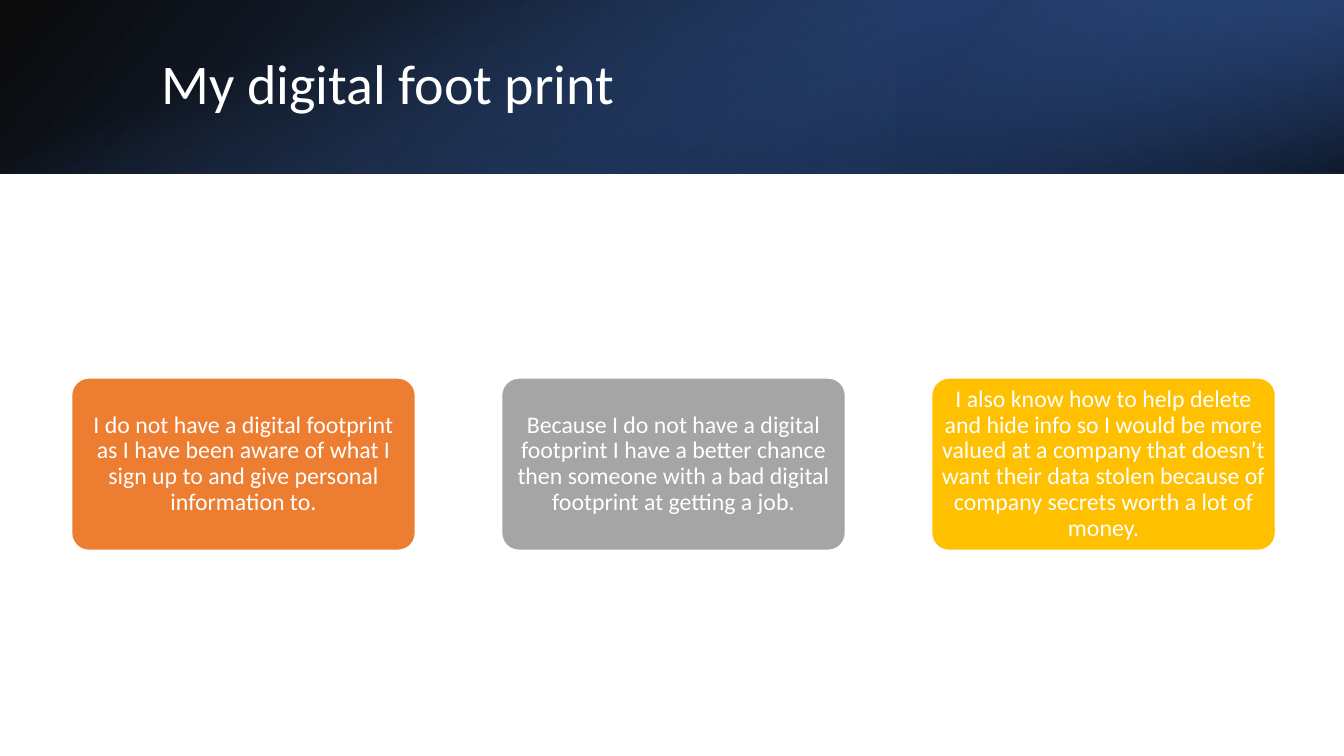
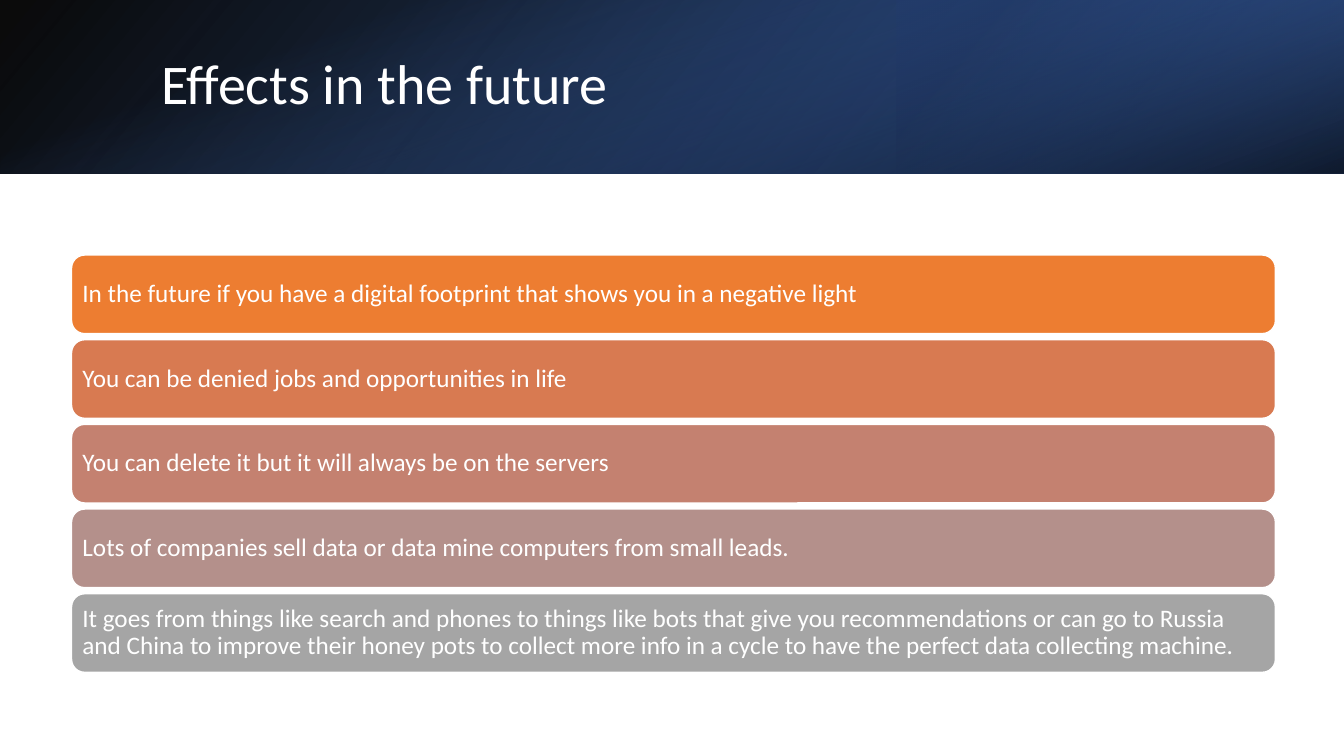
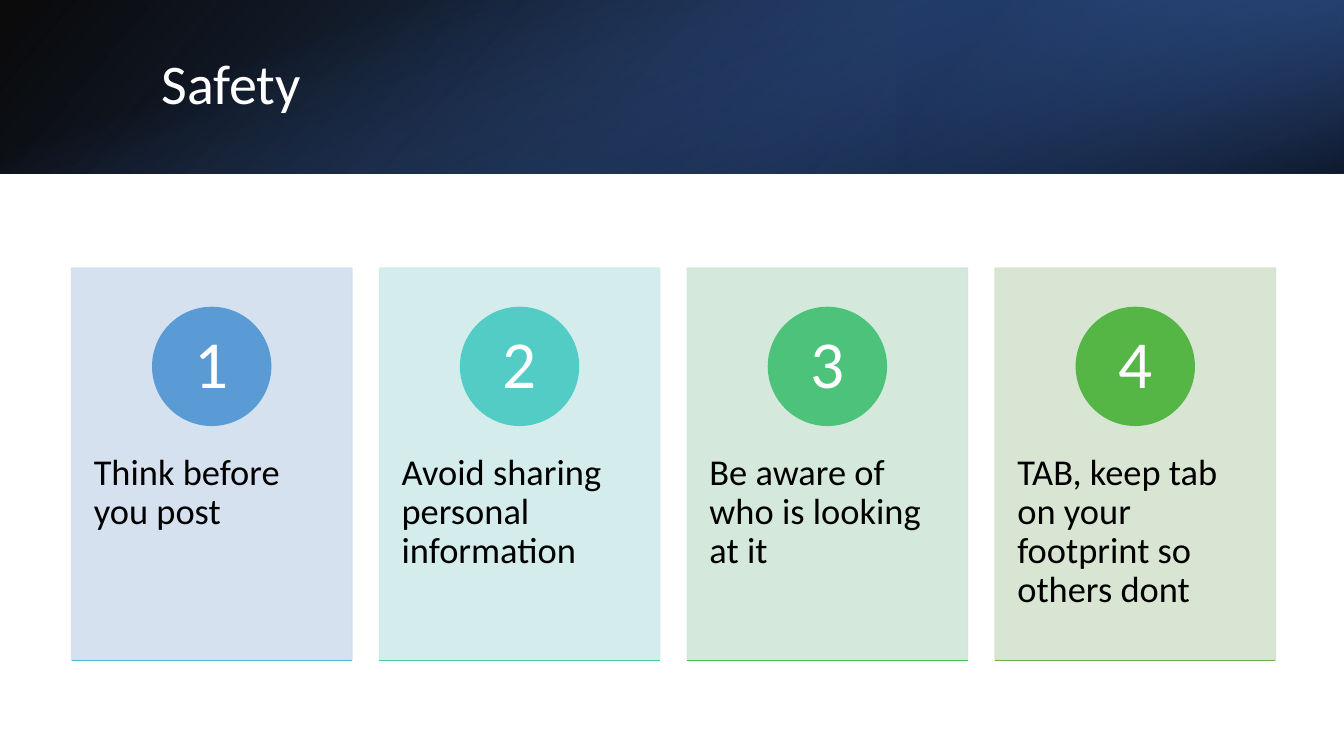
from dataclasses import dataclass
from lxml import etree
from pptx import Presentation
from pptx.dml.color import RGBColor
from pptx.enum import shapes, text
from pptx.oxml import ns
from pptx.util import Inches, Pt


@dataclass(frozen=True)
class Theme:
    font: str = "Calibri"
    white: str = "FFFFFF"
    black: str = "000000"
    head: int = 40
    box: int = 17
    row: int = 18
    card: int = 26
    num: int = 48


T = Theme()
WIDE, HIGH, BAND = 13.33, 7.5, 1.72
LEFT, RIGHT = 0.71, 12.65
KIND, SIDE = shapes.MSO_SHAPE, text.PP_ALIGN
MID, TOP = text.MSO_ANCHOR.MIDDLE, text.MSO_ANCHOR.TOP

# Header layers: place, rotation, flipped, angle, stops (position, colour, opacity)
LAYERS = [
    ((0, 0, WIDE, BAND), 0, True, 140,
     [(0, "000000", 96), (100, "2F5597", 100)]),
    ((8.89, 0, 4.44, BAND), 180, True, 320,
     [(19, "203864", 68), (100, "4472C4", 79)]),
    (((WIDE - BAND) / 2, (BAND - WIDE) / 2, BAND, WIDE), 90, False, 340,
     [(23, "4472C4", 0), (99, "000000", 74)]),
]

BOXES = [
    ("ED7D31", "I do not have a digital footprint as I have been aware of "
     "what I sign up to and give personal information to."),
    ("A5A5A5", "Because I do not have a digital footprint I have a better "
     "chance then someone with a bad digital footprint at getting a job."),
    ("FFC000", "I also know how to help delete and hide info so I would be "
     "more valued at a company that doesn’t want their data stolen because "
     "of company secrets worth a lot of money."),
]

ROWS = [
    ("ED7D31", "In the future if you have a digital footprint that shows you "
     "in a negative light"),
    ("D87A51", "You can be denied jobs and opportunities in life"),
    ("C48170", "You can delete it but it will always be on the servers"),
    ("B4908B", "Lots of companies sell data or data mine computers from "
     "small leads."),
    ("A5A5A5", "It goes from things like search and phones to things like "
     "bots that give you recommendations or can go to Russia and China to "
     "improve their honey pots to collect more info in a cycle to have the "
     "perfect data collecting machine."),
]

# Card fill, disc, base line, wording
CARDS = [
    ("D2DEEF", "5B9BD5", "57B7D1", "Think before you post"),
    ("D0ECEA", "53CCC5", "4FC7A0", "Avoid sharing personal information"),
    ("D0E7D8", "4CC27B", "48BD58", "Be aware of who is looking at it"),
    ("D5E3CF", "55B646", "70AD47",
     "TAB, keep tab on your footprint so others dont"),
]


def rgb(code):
    return RGBColor.from_string(code)


def write(shape, words, size, color, align=SIDE.LEFT, anchor=MID,
          pad=(0.1, 0.05, 0.1, 0.05)):
    frame = shape.text_frame
    frame.word_wrap = True
    frame.auto_size = text.MSO_AUTO_SIZE.NONE
    frame.vertical_anchor = anchor
    (frame.margin_left, frame.margin_top,
     frame.margin_right, frame.margin_bottom) = map(Inches, pad)
    para = frame.paragraphs[0]
    para.alignment, para.line_spacing = align, 0.9
    run = para.add_run()
    run.text = words
    run.font.name, run.font.size = T.font, Pt(size)
    run.font.color.rgb = rgb(color)


def draw(slide, kind, place, fill=None, line=None):
    shape = slide.shapes.add_shape(kind, *map(Inches, place))
    shape.shadow.inherit = False
    if fill:
        shape.fill.solid()
        shape.fill.fore_color.rgb = rgb(fill)
    else:
        shape.fill.background()
    if line:
        shape.line.color.rgb = rgb(line)
        shape.line.width = Pt(1)
    else:
        shape.line.fill.background()
    return shape


def fade(shape, alpha):
    for color in shape._element.spPr.iter(ns.qn("a:srgbClr")):
        etree.SubElement(color, ns.qn("a:alpha"), val=str(alpha * 1000))


def blend(shape, angle, stops):
    """Swap the empty fill for a linear gradient with opacity."""
    grad = etree.Element(ns.qn("a:gradFill"), rotWithShape="1")
    group = etree.SubElement(grad, ns.qn("a:gsLst"))
    for pos, code, alpha in stops:
        stop = etree.SubElement(group, ns.qn("a:gs"), pos=str(pos * 1000))
        color = etree.SubElement(stop, ns.qn("a:srgbClr"), val=code)
        etree.SubElement(color, ns.qn("a:alpha"), val=str(alpha * 1000))
    etree.SubElement(grad, ns.qn("a:lin"), ang=str(angle * 60000), scaled="0")
    props = shape._element.spPr
    props.replace(props.find(ns.qn("a:noFill")), grad)


def spread(count, width):
    """Left edges of equal parts between the side margins."""
    step = (RIGHT - LEFT - width) / (count - 1)
    return [LEFT + i * step for i in range(count)]


def start(deck, words):
    slide = deck.slides.add_slide(deck.slide_layouts[5])
    for place, turn, flip, angle, stops in LAYERS:
        layer = draw(slide, KIND.RECTANGLE, place)
        layer.rotation = turn
        if flip:
            layer._element.spPr.xfrm.set("flipH", "1")
        blend(layer, angle, stops)
    # Title in front of the header
    title = slide.shapes.title
    title.left, title.top, title.width, title.height = map(
        Inches, (1.5, 0.38, 10.98, 0.96))
    write(title, words, T.head, T.white)
    slide.shapes._spTree.append(title._element)
    return slide


def boxes(deck):
    slide = start(deck, "My digital foot print")
    width = 3.41
    for x, (fill, words) in zip(spread(len(BOXES), width), BOXES):
        box = draw(slide, KIND.ROUNDED_RECTANGLE, (x, 3.75, width, 1.71),
                   fill, T.white)
        box.adjustments[0] = 0.1
        write(box, words, T.box, T.white, SIDE.CENTER,
              pad=(0.04, 0.02, 0.04, 0.02))


def rows(deck):
    slide = start(deck, "Effects in the future")
    for i, (fill, words) in enumerate(ROWS):
        row = draw(slide, KIND.ROUNDED_RECTANGLE,
                   (LEFT, 2.53 + i * 0.84, RIGHT - LEFT, 0.78),
                   fill, T.white)
        write(row, words, T.row, T.white, pad=(0.07,) * 4)


def cards(deck):
    slide = start(deck, "Safety")
    top, width, height, disc = 2.66, 2.78, 3.89, 1.17
    base = Inches(top + height)
    for i, x in enumerate(spread(len(CARDS), width)):
        fill, tint, edge, words = CARDS[i]
        card = draw(slide, KIND.RECTANGLE, (x, top, width, height),
                    fill, fill)
        fade(card, 90)
        write(card, words, T.card, T.black, anchor=TOP,
              pad=(0.22, 1.84, 0.22, 0.44))
        # Numbered disc
        dot = draw(slide, KIND.OVAL,
                   (x + (width - disc) / 2, top + 0.39, disc, disc),
                   tint, tint)
        write(dot, str(i + 1), T.num, T.white, SIDE.CENTER,
              pad=(0.09, 0.01, 0.09, 0.01))
        # Base line
        rule = slide.shapes.add_connector(
            shapes.MSO_CONNECTOR.STRAIGHT, Inches(x), base,
            Inches(x + width), base)
        rule.line.color.rgb = rgb(edge)
        rule.line.width = Pt(1)
        etree.SubElement(rule._element.spPr, ns.qn("a:effectLst"))


def main():
    deck = Presentation()
    deck.slide_width, deck.slide_height = Inches(WIDE), Inches(HIGH)
    for build in (boxes, rows, cards):
        build(deck)
    deck.save("out.pptx")


if __name__ == "__main__":
    main()
